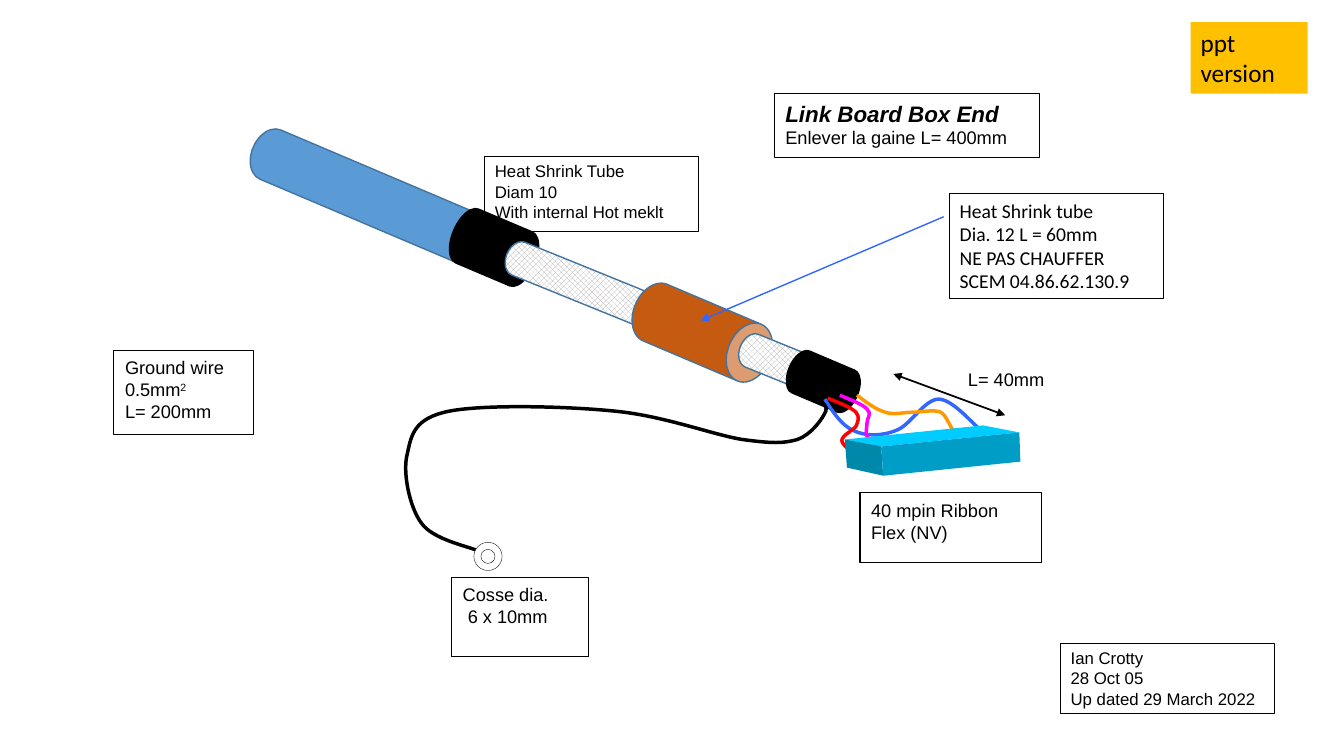
import dataclasses
import typing

import lxml.etree
import pptx
import pptx.dml.color
import pptx.enum.dml
import pptx.enum.shapes
import pptx.enum.text
import pptx.oxml.ns
import pptx.util

Inches = pptx.util.Inches
Color = pptx.dml.color.RGBColor
Shape = pptx.enum.shapes.MSO_SHAPE
qn = pptx.oxml.ns.qn
Point = tuple[float, float]

BLACK = Color(0x00, 0x00, 0x00)
WHITE = Color(0xFF, 0xFF, 0xFF)
GREY = Color(0xAF, 0xAB, 0xAB)
SHEATH = Color(0x5B, 0x9B, 0xD5)
EDGE = Color(0x43, 0x73, 0x9E)
COPPER = Color(0xC5, 0x5A, 0x11)
AMBER = Color(0xFF, 0xC0, 0x00)
BLUE = Color(0x33, 0x66, 0xFF)
RED = Color(0xFF, 0x00, 0x00)
MAGENTA = Color(0xFF, 0x00, 0xFF)
ORANGE = Color(0xFF, 0x99, 0x00)
CYAN = Color(0x00, 0xCC, 0xFF)
CYAN_FRONT = Color(0x00, 0x9D, 0xC7)
CYAN_SIDE = Color(0x00, 0x88, 0xAA)

WIDE_INSET = (0.11, 0.06)
NORMAL_INSET = (0.1, 0.05)


@dataclasses.dataclass
class Tube:
    left: float
    top: float
    width: float
    height: float
    angle: float
    fill: typing.Optional[Color] = None
    capped: bool = False


@dataclasses.dataclass
class Row:
    text: str
    size: float = 13
    strong: bool = False
    raised: str = ""


@dataclasses.dataclass
class Label:
    left: float
    top: float
    width: float
    height: float
    rows: list[Row]
    fill: typing.Optional[Color] = None
    line: typing.Optional[Color] = BLACK
    font: str = "Arial"
    inset: Point = WIDE_INSET


@dataclasses.dataclass
class Wire:
    color: Color
    points: list[Point]


@dataclasses.dataclass
class Face:
    color: Color
    corners: list[Point]


@dataclasses.dataclass
class Arrow:
    start: Point
    end: Point
    color: Color
    weight: float
    heads: tuple[str, ...]


TUBES = [
    Tube(3.41, 0.69, 0.53, 2.53, 113, SHEATH),
    Tube(4.61, 2.02, 0.58, 0.87, 113, BLACK, True),
    Tube(5.64, 1.99, 0.35, 1.7, 112.1),
    Tube(6.66, 2.58, 0.61, 1.44, 113, COPPER),
    Tube(7.53, 3.19, 0.35, 0.78, 112.1),
    Tube(7.94, 3.42, 0.45, 0.73, 113, BLACK, True),
]

LABELS = [
    Label(4.81, 1.55, 2.12, 0.75,
          [Row("Heat Shrink Tube", 12), Row("Diam 10", 12), Row("With internal Hot meklt", 12)],
          inset=NORMAL_INSET),
    Label(1.13, 3.48, 1.38, 0.83, [Row("Ground wire 0.5mm", raised="2"), Row("L= 200mm")]),
    Label(4.48, 5.73, 1.36, 0.78, [Row("Cosse dia."), Row(" 6 x 10mm")]),
    Label(8.53, 4.89, 1.8, 0.69, [Row("40 mpin Ribbon Flex (NV)")], WHITE),
    Label(7.68, 0.93, 2.63, 0.63,
          [Row("Link Board Box End", 16, True), Row("Enlever la gaine L= 400mm")], WHITE),
    Label(9.49, 3.59, 1.19, 0.38, [Row("L= 40mm")], line=None),
    Label(10.52, 6.38, 2.12, 0.7,
          [Row("Ian Crotty", 12), Row("28 Oct 05", 12), Row("Up dated 29 March 2022", 12)],
          inset=NORMAL_INSET),
    Label(11.81, 0.22, 1.16, 0.71, [Row("ppt version", 18)], AMBER, None, "Calibri", NORMAL_INSET),
    Label(9.42, 1.92, 2.12, 1.04,
          [Row("Heat Shrink tube", 14), Row("Dia. 12 L = 60mm", 14),
           Row("NE PAS CHAUFFER", 14), Row("SCEM 04.86.62.130.9", 14)],
          font="Calibri", inset=NORMAL_INSET),
]

WIRES = [
    Wire(BLUE, [(8.18, 3.96), (8.26, 4.09), (8.35, 4.22), (8.46, 4.27), (8.58, 4.33), (8.74, 4.33),
                (8.89, 4.27), (9.03, 4.22), (9.17, 3.96), (9.31, 3.96), (9.45, 3.96), (9.66, 4.22),
                (9.73, 4.27)]),
    Wire(RED, [(8.21, 3.95), (8.33, 4), (8.44, 4.04), (8.49, 4.09), (8.53, 4.14), (8.51, 4.18),
               (8.49, 4.23), (8.46, 4.27), (8.35, 4.32), (8.35, 4.37), (8.35, 4.41), (8.44, 4.48),
               (8.49, 4.51), (8.53, 4.53), (8.58, 4.52), (8.63, 4.51)]),
    Wire(MAGENTA, [(8.33, 3.92), (8.44, 3.97), (8.56, 4.01), (8.6, 4.06), (8.65, 4.1), (8.6, 4.15),
                   (8.6, 4.19), (8.6, 4.24), (8.58, 4.29), (8.6, 4.33), (8.63, 4.38), (8.68, 4.42),
                   (8.74, 4.47)]),
    Wire(ORANGE, [(8.5, 3.92), (8.59, 3.99), (8.68, 4.06), (8.78, 4.09), (8.87, 4.12), (8.96, 4.09),
                  (9.05, 4.09), (9.14, 4.09), (9.26, 4.06), (9.33, 4.09), (9.39, 4.12), (9.42, 4.24),
                  (9.46, 4.27), (9.51, 4.29), (9.55, 4.28), (9.6, 4.27)]),
    Wire(BLACK, [(8.05, 3.94), (8.13, 3.98), (8.21, 4.01), (8.19, 4.08), (8.16, 4.15), (8.05, 4.31),
                 (7.91, 4.36), (7.77, 4.4), (7.66, 4.4), (7.36, 4.36), (7.06, 4.31), (6.6, 4.13),
                 (6.11, 4.08), (5.63, 4.03), (4.8, 4.01), (4.45, 4.08), (4.11, 4.15), (4.08, 4.31),
                 (4.04, 4.5), (3.99, 4.68), (4.06, 5.03), (4.18, 5.19), (4.29, 5.35), (4.64, 5.42),
                 (4.73, 5.46)]),
]

FACES = [
    Face(CYAN, [(8.38, 4.36), (9.75, 4.22), (10.11, 4.29), (8.74, 4.43)]),
    Face(CYAN_SIDE, [(8.38, 4.36), (8.74, 4.43), (8.76, 4.72), (8.4, 4.64)]),
    Face(CYAN_FRONT, [(8.74, 4.43), (10.11, 4.29), (10.12, 4.58), (8.76, 4.72)]),
]

ARROWS = [
    Arrow((8.86, 3.71), (9.97, 4.12), BLACK, 1.25, ("headEnd", "tailEnd")),
    Arrow((9.36, 2.15), (6.95, 3.18), BLUE, 1, ("tailEnd",)),
]


def set_all(target: typing.Any, values: dict[str, typing.Any]) -> None:
    for name, value in values.items():
        setattr(target, name, value)


def paint(shape: typing.Any, fill: typing.Optional[Color], line: typing.Optional[Color],
          weight: float = 0.75) -> None:
    shape.shadow.inherit = False
    for form, color in ((shape.fill, fill), (shape.line.fill, line)):
        if color is None:
            form.background()
        else:
            form.solid()
            form.fore_color.rgb = color
    if line is not None:
        shape.line.width = pptx.util.Pt(weight)


def add_preset(page: typing.Any, kind: typing.Any, item: typing.Any) -> typing.Any:
    return page.shapes.add_shape(kind, *map(Inches, (item.left, item.top, item.width, item.height)))


def draw_tube(page: typing.Any, tube: Tube) -> None:
    can = add_preset(page, Shape.FLOWCHART_MAGNETIC_DISK if tube.capped else Shape.CAN, tube)
    can.rotation = tube.angle
    paint(can, tube.fill, BLACK if tube.capped else EDGE, 1)
    if not tube.capped:
        can.adjustments[0] = 0.698
    if tube.fill is None:
        can.fill.patterned()
        can.fill.pattern = pptx.enum.dml.MSO_PATTERN.OUTLINED_DIAMOND
        can.fill.fore_color.rgb = GREY
        can.fill.back_color.rgb = WHITE


def draw_label(page: typing.Any, label: Label) -> None:
    box = add_preset(page, Shape.RECTANGLE, label)
    paint(box, label.fill, label.line)
    frame = box.text_frame
    side, end = map(Inches, label.inset)
    set_all(frame, {"word_wrap": True, "vertical_anchor": pptx.enum.text.MSO_ANCHOR.TOP,
                    "margin_left": side, "margin_right": side,
                    "margin_top": end, "margin_bottom": end})
    for index, row in enumerate(label.rows):
        para = frame.add_paragraph() if index else frame.paragraphs[0]
        para.alignment = pptx.enum.text.PP_ALIGN.LEFT
        for text in filter(None, (row.text, row.raised)):
            span = para.add_run()
            span.text = text
            set_all(span.font, {"name": label.font, "size": pptx.util.Pt(row.size),
                                "bold": row.strong, "italic": row.strong})
            span.font.color.rgb = BLACK
        if row.raised:
            span.font._element.set("baseline", "30000")


def add_outline(page: typing.Any, points: list[Point], close: bool) -> typing.Any:
    start, *rest = [(Inches(x), Inches(y)) for x, y in points]
    builder = page.shapes.build_freeform(*start)
    builder.add_line_segments(rest, close=close)
    return builder.convert_to_shape()


def draw_wire(page: typing.Any, wire: Wire) -> None:
    strand = add_outline(page, wire.points, False)
    paint(strand, None, wire.color, 2.5)
    steps = list(strand.element.iter(qn("a:lnTo")))
    for index in range(0, len(steps), 3):
        curve = lxml.etree.Element(qn("a:cubicBezTo"))
        steps[index].addprevious(curve)
        for step in steps[index:index + 3]:
            curve.append(step[0])
            step.getparent().remove(step)


def draw_arrow(page: typing.Any, arrow: Arrow) -> None:
    link = page.shapes.add_connector(pptx.enum.shapes.MSO_CONNECTOR.STRAIGHT,
                                     *map(Inches, arrow.start + arrow.end))
    link.line.color.rgb = arrow.color
    link.line.width = pptx.util.Pt(arrow.weight)
    for head in arrow.heads:
        lxml.etree.SubElement(link.line._get_or_add_ln(), qn("a:" + head), type="triangle")
    lxml.etree.SubElement(link.element.spPr, qn("a:effectLst"))


def main() -> None:
    deck = pptx.Presentation()
    set_all(deck, {"slide_width": Inches(13.33), "slide_height": Inches(7.5)})
    page = deck.slides.add_slide(deck.slide_layouts[6])
    for tube in TUBES:
        draw_tube(page, tube)
    for label in LABELS:
        draw_label(page, label)
    for wire in WIRES:
        draw_wire(page, wire)
    for face in FACES:
        paint(add_outline(page, face.corners, True), face.color, None)
    for arrow in ARROWS:
        draw_arrow(page, arrow)
    lug = page.shapes.add_shape(Shape.DONUT, *map(Inches, (4.7, 5.38, 0.28, 0.28)))
    lug.adjustments[0] = 0.25
    paint(lug, WHITE, BLACK, 0.25)
    deck.save("out.pptx")


if __name__ == "__main__":
    main()
